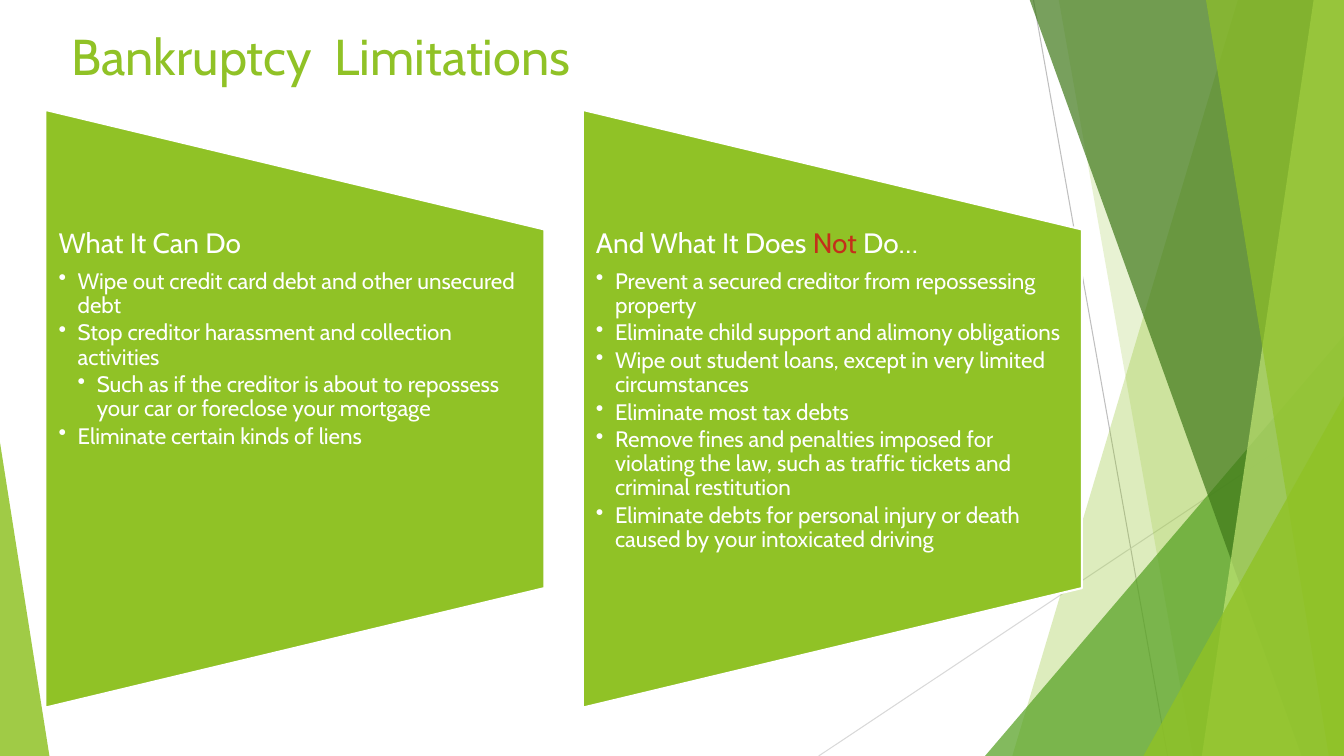
from lxml import etree
from pptx import Presentation
from pptx import util as u
from pptx.dml.color import RGBColor
from pptx.enum import shapes, text
from pptx.oxml import ns

LIME = RGBColor(0x90, 0xC2, 0x26)
GREEN = RGBColor(0x54, 0xA0, 0x21)
DARK_GREEN = RGBColor(0x3F, 0x78, 0x19)
PALE_LIME = RGBColor(0xC0, 0xE4, 0x74)
WHITE = RGBColor(0xFF, 0xFF, 0xFF)
RED = RGBColor(0xC4, 0x2F, 0x1A)
GREY = RGBColor(0xBF, 0xBF, 0xBF)
LIGHT_GREY = RGBColor(0xD9, 0xD9, 0xD9)

WIDTH, HEIGHT = 13.33, 7.5
TOP = -0.01
INDENT = 0.19

BANDS = [
    (12.28, 10.04, LIME, 30),
    (10.5, 11.83, LIME, 20),
    (10.21, 12.91, DARK_GREEN, 70),
    (13.03, 11.92, PALE_LIME, 70),
    (11.96, 13.18, LIME, 65),
]

PANELS = [
    (
        [("What It Can Do", WHITE)],
        [
            (1, "Wipe out credit card debt and other unsecured debt"),
            (1, "Stop creditor harassment and collection activities"),
            (2, "Such as if the creditor is about to repossess your car or foreclose your mortgage"),
            (1, "Eliminate certain kinds of liens"),
        ],
    ),
    (
        [("And What It Does ", WHITE), ("Not ", RED), ("Do…", WHITE)],
        [
            (1, "Prevent a secured creditor from repossessing property"),
            (1, "Eliminate child support and alimony obligations"),
            (1, "Wipe out student loans, except in very limited circumstances"),
            (1, "Eliminate most tax debts"),
            (1, "Remove fines and penalties imposed for violating the law, such as traffic tickets and criminal restitution"),
            (1, "Eliminate debts for personal injury or death caused by your intoxicated driving"),
        ],
    ),
]


class SlideBuilder:
    font_name = "Cabin"

    def __init__(self, slide):
        self.slide = slide

    def line(self, start, end, color):
        points = [u.Inches(value) for value in (*start, *end)]
        line = self.slide.shapes.add_connector(shapes.MSO_CONNECTOR.STRAIGHT, *points)
        line.line.color.rgb = color
        line.line.width = u.Pt(0.75)
        etree.SubElement(line._element.spPr, ns.qn("a:effectLst"))

    def paint(self, shape, color, opacity=100):
        shape.shadow.inherit = False
        shape.fill.solid()
        shape.fill.fore_color.rgb = color
        shape.line.fill.background()
        if opacity < 100:
            color_element = shape._element.spPr.find(".//" + ns.qn("a:srgbClr"))
            alpha = etree.SubElement(color_element, ns.qn("a:alpha"))
            alpha.set("val", str(opacity * 1000))

    def band(self, top_left, bottom_left, color, opacity):
        corners = [(top_left, TOP), (WIDTH, TOP), (WIDTH, HEIGHT), (bottom_left, HEIGHT)]
        points = [(u.Inches(x), u.Inches(y)) for x, y in corners]
        builder = self.slide.shapes.build_freeform(*points[0])
        builder.add_line_segments(points[1:], close=True)
        self.paint(builder.convert_to_shape(), color, opacity)

    def shape(self, kind, left, top, width, height, color, opacity=100):
        box = [u.Inches(value) for value in (left, top, width, height)]
        shape = self.slide.shapes.add_shape(kind, *box)
        self.paint(shape, color, opacity)
        return shape

    def triangle(self, left, width, height, apex, color, opacity):
        shape = self.shape(shapes.MSO_SHAPE.ISOSCELES_TRIANGLE,
                           left, HEIGHT - height, width, height, color, opacity)
        shape.adjustments[0] = apex

    def text_frame(self, left, top, width, height, side=0.1, edge=0.05):
        box = [u.Inches(value) for value in (left, top, width, height)]
        frame = self.slide.shapes.add_textbox(*box).text_frame
        frame.word_wrap = True
        frame.vertical_anchor = text.MSO_ANCHOR.TOP
        frame.margin_left = frame.margin_right = u.Inches(side)
        frame.margin_top = frame.margin_bottom = u.Inches(edge)
        return frame

    def style(self, paragraph, size, color=None):
        paragraph.font.name = self.font_name
        paragraph.font.size = u.Pt(size)
        if color is not None:
            paragraph.font.color.rgb = color

    def title(self, words):
        paragraph = self.text_frame(0.61, 0.2, 9.4, 1.44).paragraphs[0]
        paragraph.text = words
        self.style(paragraph, 36, LIME)

    def bullet(self, frame, level, words):
        paragraph = frame.add_paragraph()
        paragraph.text = words
        paragraph.level = level
        paragraph.line_spacing = 0.9
        paragraph.space_before = u.Pt(0)
        paragraph.space_after = u.Pt(2.4)
        self.style(paragraph, 16, WHITE)
        properties = paragraph._p.get_or_add_pPr()
        properties.set("marL", str(u.Inches(INDENT * level)))
        properties.set("indent", str(u.Inches(-INDENT)))
        mark = etree.Element(ns.qn("a:buChar"), char="•")
        properties.find(ns.qn("a:defRPr")).addprevious(mark)

    def panel(self, left, heading, bullets):
        trapezoid = self.shape(shapes.MSO_SHAPE.FLOWCHART_MANUAL_OPERATION,
                               left - 0.48, 1.58, 5.93, 4.95, LIME)
        trapezoid.rotation = 270
        trapezoid.line.color.rgb = WHITE
        trapezoid.line.width = u.Pt(1.5)
        frame = self.text_frame(left, 2.28, 4.95, 3.56, side=0.14, edge=0)
        paragraph = frame.paragraphs[0]
        paragraph.line_spacing = 0.9
        paragraph.space_after = u.Pt(7)
        self.style(paragraph, 20)
        for words, color in heading:
            run = paragraph.add_run()
            run.text = words
            run.font.color.rgb = color
        for level, words in bullets:
            self.bullet(frame, level, words)


def main():
    presentation = Presentation()
    presentation.slide_width = u.Inches(WIDTH)
    presentation.slide_height = u.Inches(HEIGHT)
    builder = SlideBuilder(presentation.slides.add_slide(presentation.slide_layouts[6]))

    builder.line((10.25, 0), (11.58, HEIGHT), GREY)
    builder.line((WIDTH, 4.03), (8.12, HEIGHT), LIGHT_GREY)
    for band in BANDS[:2]:
        builder.band(*band)
    builder.triangle(9.77, 3.56, 4.17, 1, GREEN, 72)
    for band in BANDS[2:]:
        builder.band(*band)
    builder.triangle(11.34, 1.99, 3.57, 1, LIME, 80)
    builder.triangle(0, 0.49, 3.11, 0, LIME, 85)

    builder.title("Bankruptcy  Limitations")
    for index, (heading, bullets) in enumerate(PANELS):
        builder.panel(0.44 + index * 5.33, heading, bullets)

    presentation.save("out.pptx")


if __name__ == "__main__":
    main()
